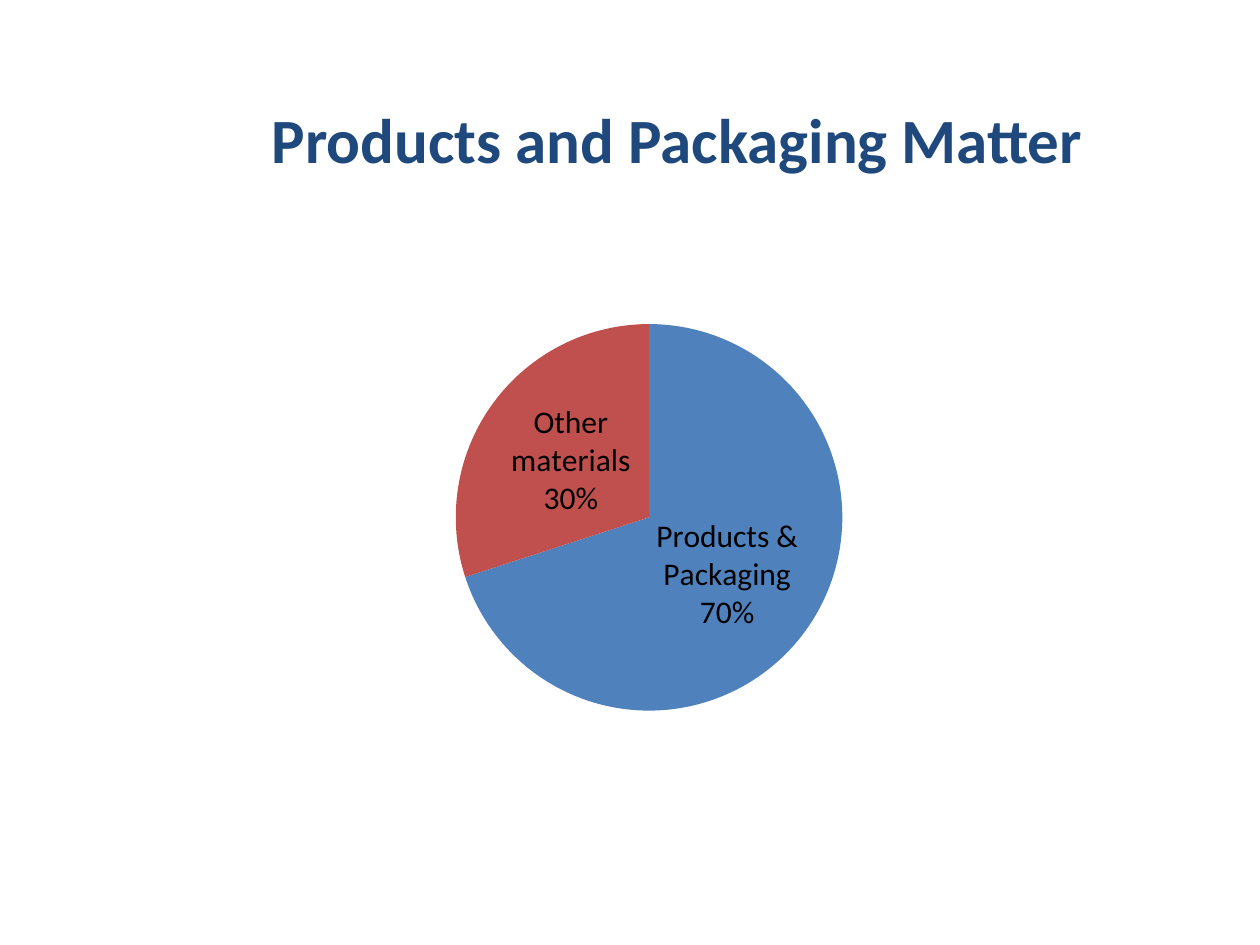
import pptx
import pptx.chart.data
import pptx.dml.color
import pptx.enum.chart
import pptx.enum.text
import pptx.oxml
import pptx.util

Inches = pptx.util.Inches
Pt = pptx.util.Pt
RGBColor = pptx.dml.color.RGBColor

NAVY = RGBColor(0x1F, 0x49, 0x7D)
BLUE = RGBColor(0x4F, 0x81, 0xBD)
RED = RGBColor(0xC0, 0x50, 0x4D)
BLACK = RGBColor(0, 0, 0)
FONT = "Calibri"


class SlideBuilder:
    """Holds the text style and the current slide."""

    def __init__(self, prs):
        self.title_style = {"name": FONT, "size": Pt(36), "bold": True}
        self.chart_style = {"name": FONT, "size": Pt(18), "bold": False}
        self.s = prs.slides.add_slide(prs.slide_layouts[5])

    def format_font(self, font, style, color):
        for key, value in style.items():
            setattr(font, key, value)
        font.color.rgb = color

    def title(self, text, left, top, width, height):
        sp = self.s.shapes.title
        box = {"left": left, "top": top, "width": width, "height": height}
        for key, value in box.items():
            setattr(sp, key, Inches(value))
        tf = sp.text_frame
        tf.word_wrap = True
        tf.auto_size = pptx.enum.text.MSO_AUTO_SIZE.SHAPE_TO_FIT_TEXT
        tf.vertical_anchor = pptx.enum.text.MSO_ANCHOR.TOP
        p = tf.paragraphs[0]
        p.alignment = pptx.enum.text.PP_ALIGN.CENTER
        r = p.add_run()
        r.text = text
        self.format_font(r.font, self.title_style, NAVY)

    def pie(self, slices, left, top, width, height, plot):
        data = pptx.chart.data.CategoryChartData()
        data.categories = [name for name, _, _ in slices]
        data.add_series("Series 1", [value for _, value, _ in slices])
        chart = self.s.shapes.add_chart(
            pptx.enum.chart.XL_CHART_TYPE.PIE,
            Inches(left), Inches(top), Inches(width), Inches(height), data).chart
        chart.has_title = False
        chart.has_legend = False
        self.format_font(chart.font, self.chart_style, BLACK)

        # Slice colours
        pie = chart.plots[0]
        pie.vary_by_categories = True
        for i, (_, _, color) in enumerate(slices):
            fill = pie.series[0].points[i].format.fill
            fill.solid()
            fill.fore_color.rgb = color

        # Category and percentage inside each slice
        labels = pie.series[0].data_labels
        flags = {"show_category_name": True, "show_percentage": True,
                 "show_value": False, "show_legend_key": False,
                 "position": pptx.enum.chart.XL_LABEL_POSITION.CENTER}
        for key, value in flags.items():
            setattr(labels, key, value)
        self.format_font(labels.font, self.chart_style, BLACK)
        self.place_plot(chart, plot)

    def place_plot(self, chart, plot):
        """Set the plot area as fractions of the chart frame."""
        ns = "http://schemas.openxmlformats.org/drawingml/2006/chart"
        sizes = "".join(f'<c:{key} val="{value}"/>' for key, value in plot.items())
        layout = pptx.oxml.parse_xml(
            f'<c:layout xmlns:c="{ns}"><c:manualLayout><c:layoutTarget val="inner"/>'
            f'<c:xMode val="edge"/><c:yMode val="edge"/>{sizes}'
            '</c:manualLayout></c:layout>')
        area = chart.plots[0]._element.getparent()
        for old in area.findall(f"{{{ns}}}layout"):
            area.remove(old)
        area.insert(0, layout)


def main():
    prs = pptx.Presentation()
    prs.slide_width, prs.slide_height = Inches(10), Inches(7.5)
    builder = SlideBuilder(prs)

    # Pie chart
    slices = [("Products & Packaging", 70, BLUE), ("Other materials", 30, RED)]
    builder.pie(slices, 1.75, 1.92, 6.67, 4.97,
                {"x": 0.28, "y": 0.13, "w": 0.46, "h": 0.62})

    # Title
    builder.title("Products and Packaging Matter", 1.25, 0.75, 8.25, 0.71)

    prs.save("out.pptx")


if __name__ == "__main__":
    main()
